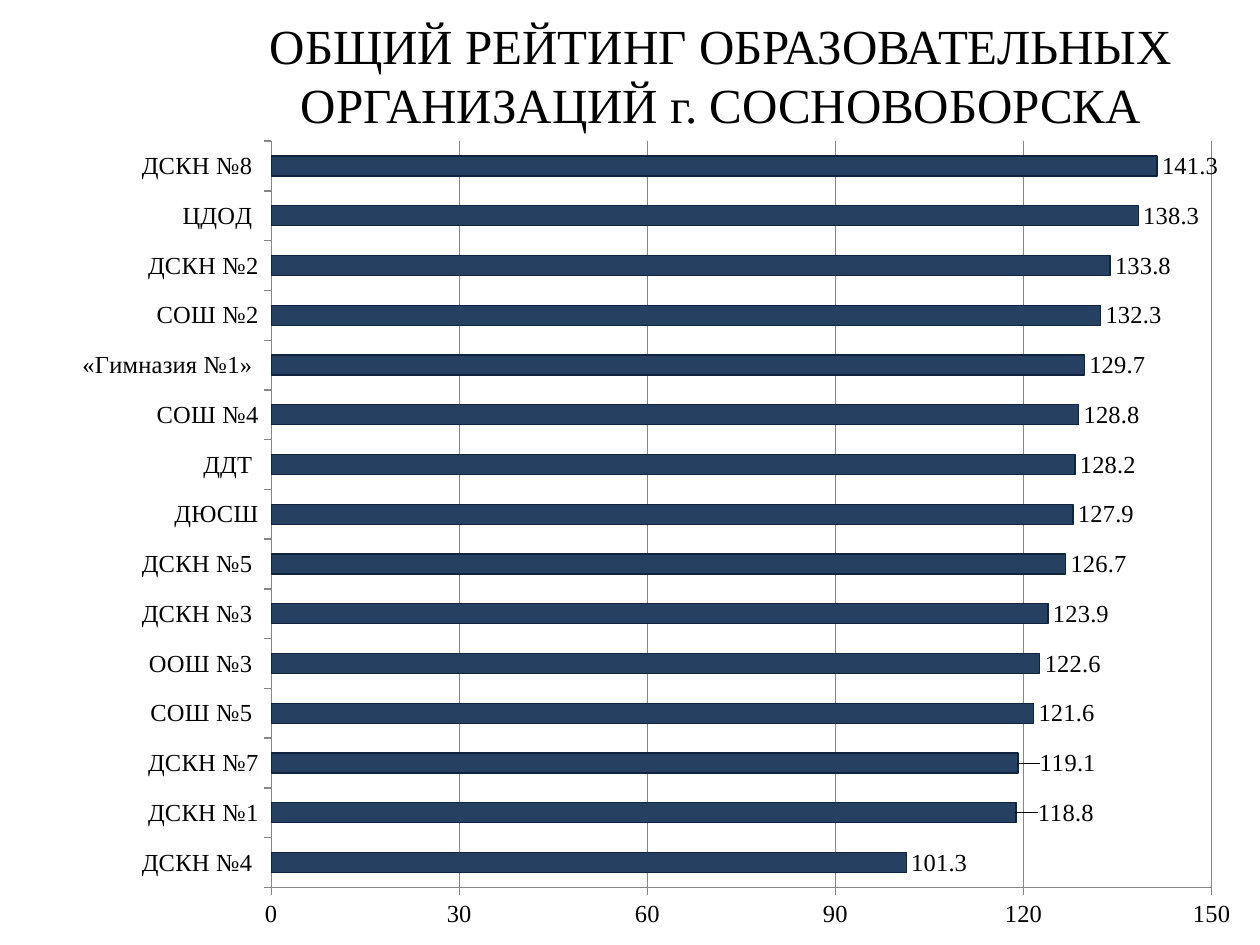
"""Builds a slide with a bar chart ranking the schools of Sosnovoborsk."""
from dataclasses import dataclass

from lxml.etree import fromstring
from pptx import Presentation
from pptx.chart.data import CategoryChartData
from pptx.dml.color import RGBColor
from pptx.enum.chart import XL_CHART_TYPE, XL_LABEL_POSITION, XL_TICK_MARK
from pptx.enum.text import MSO_ANCHOR, PP_ALIGN
from pptx.oxml.ns import qn
from pptx.util import Pt


@dataclass(frozen=True)
class Theme:
    font: str = "Times New Roman"
    title_size: Pt = Pt(28)
    chart_size: Pt = Pt(14)
    text: RGBColor = RGBColor(0, 0, 0)
    bar: RGBColor = RGBColor(0x25, 0x40, 0x61)
    bar_line: RGBColor = RGBColor(0x0F, 0x24, 0x3E)
    grid: RGBColor = RGBColor(0x86, 0x86, 0x86)


def style_font(font, size):
    font.name = theme.font
    font.size = size
    font.bold = False
    font.color.rgb = theme.text


def manual_layout(**settings):
    items = "".join(f'<c:{name} val="{value}"/>' for name, value in settings.items())
    return fromstring(
        '<c:layout xmlns:c="http://schemas.openxmlformats.org/drawingml/2006/chart">'
        f"<c:manualLayout>{items}</c:manualLayout></c:layout>"
    )


theme = Theme()
ratings = [
    ("ДСКН №4 ", 101.3),
    ("ДСКН №1", 118.8),
    ("ДСКН №7", 119.1),
    ("СОШ №5 ", 121.6),
    ("ООШ №3 ", 122.6),
    ("ДСКН №3 ", 123.9),
    ("ДСКН №5 ", 126.7),
    ("ДЮСШ", 127.9),
    ("ДДТ ", 128.2),
    ("СОШ №4", 128.8),
    (" «Гимназия №1» ", 129.7),
    ("СОШ №2", 132.3),
    ("ДСКН №2", 133.8),
    ("ЦДОД ", 138.3),
    ("ДСКН №8 ", 141.3),
]
shifted_labels = (1, 2)

deck = Presentation()
deck.slide_width, deck.slide_height = Pt(720), Pt(540)
slide = deck.slides.add_slide(deck.slide_layouts[5])

title = slide.shapes.title
title.left, title.top, title.width, title.height = Pt(87.84), Pt(8.64), Pt(648), Pt(67.68)
title.text_frame.text = "ОБЩИЙ РЕЙТИНГ ОБРАЗОВАТЕЛЬНЫХ ОРГАНИЗАЦИЙ г. СОСНОВОБОРСКА"
title.text_frame.vertical_anchor = MSO_ANCHOR.MIDDLE
para = title.text_frame.paragraphs[0]
para.alignment = PP_ALIGN.CENTER
style_font(para.font, theme.title_size)

chart_data = CategoryChartData(number_format="0.0")
chart_data.categories = [name for name, rating in ratings]
chart_data.add_series("Series 1", [rating for name, rating in ratings])
chart = slide.shapes.add_chart(
    XL_CHART_TYPE.BAR_CLUSTERED, Pt(30.96), Pt(71.28), Pt(689.04), Pt(468.72), chart_data
).chart
chart.has_legend = False
chart.has_title = False
style_font(chart.font, theme.chart_size)

plot = chart.plots[0]
plot.gap_width = 150
plot.vary_by_categories = False
series = plot.series[0]
series.format.fill.solid()
series.format.fill.fore_color.rgb = theme.bar
series.format.line.color.rgb = theme.bar_line
series.format.line.width = Pt(0.75)

value_axis = chart.value_axis
value_axis.minimum_scale, value_axis.maximum_scale = 0, 150
value_axis.major_unit = 30
value_axis.has_major_gridlines = True
value_axis.tick_labels.number_format = "0"
value_axis.tick_labels.number_format_is_linked = False
for axis in (value_axis, chart.category_axis):
    axis.major_tick_mark = XL_TICK_MARK.OUTSIDE
    axis.minor_tick_mark = XL_TICK_MARK.NONE
for lines in (value_axis, chart.category_axis, value_axis.major_gridlines):
    lines.format.line.color.rgb = theme.grid
    lines.format.line.width = Pt(0.75)

labels = series.data_labels
labels.show_value = True
labels.number_format = "0.0"
labels.number_format_is_linked = False
labels.position = XL_LABEL_POSITION.OUTSIDE_END
style_font(labels.font, theme.chart_size)
for index in shifted_labels:
    label = series.points[index].data_label
    label.position = XL_LABEL_POSITION.OUTSIDE_END
    style_font(label.font, theme.chart_size)
for label_xml in series._element.iter(qn("c:dLbl")):
    label_xml.find(qn("c:idx")).addnext(manual_layout(x=0.014, y=0))

plot_area = chart._chartSpace.find(f".//{qn('c:plotArea')}")
for layout in plot_area.findall(qn("c:layout")):
    plot_area.remove(layout)
plot_area.insert(
    0,
    manual_layout(
        layoutTarget="inner", xMode="edge", yMode="edge", x=0.18, y=0.02, w=0.78, h=0.91
    ),
)

deck.save("out.pptx")
